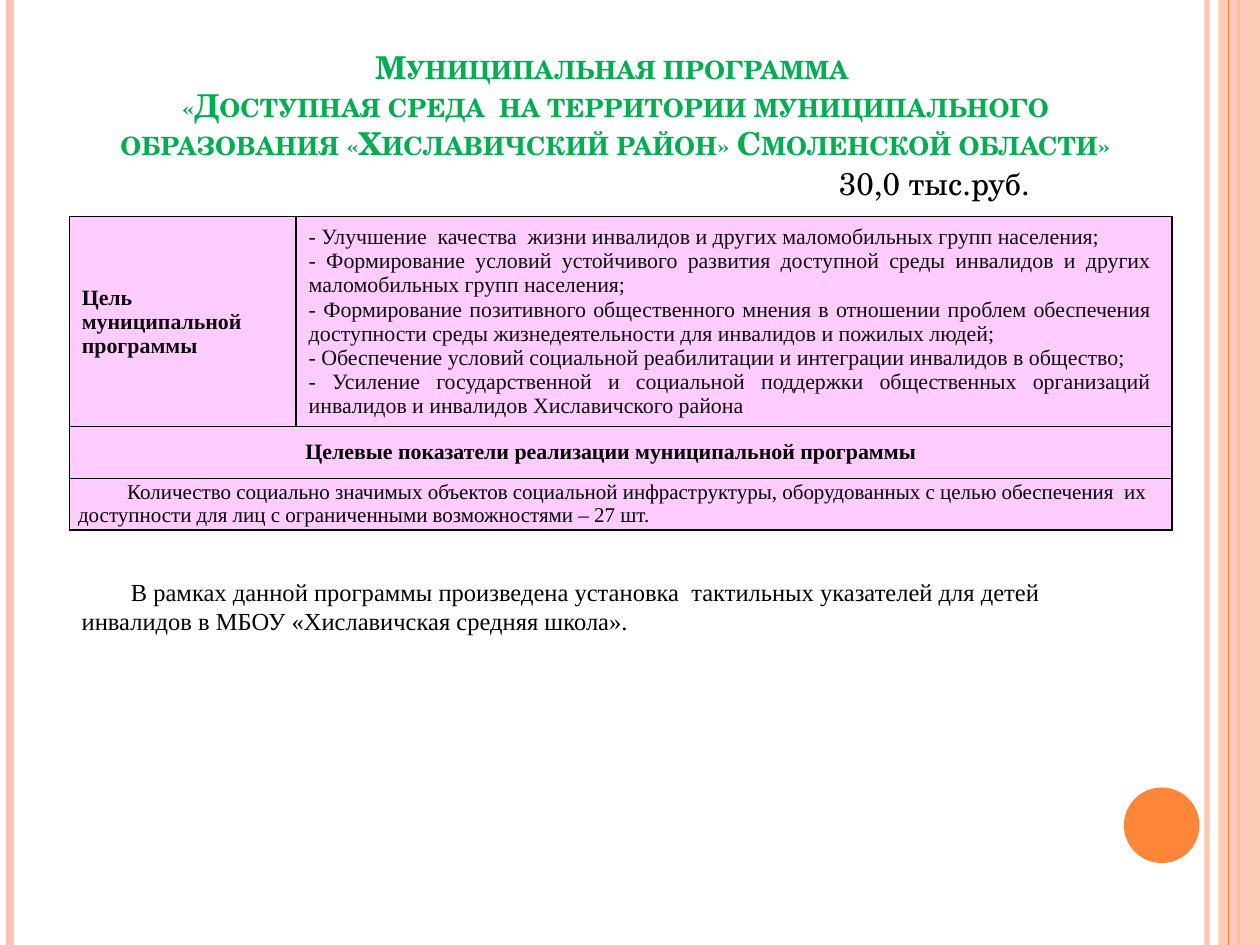
from collections import namedtuple

from lxml.etree import SubElement
from pptx import Presentation
from pptx.dml.color import RGBColor
from pptx.enum.shapes import MSO_CONNECTOR, MSO_SHAPE
from pptx.enum.text import MSO_ANCHOR, PP_ALIGN
from pptx.oxml import parse_xml
from pptx.oxml.ns import nsdecls, qn
from pptx.util import Inches, Pt

COLUMNS, ROWS = 100, 75
UNIT = Inches(0.1)
SERIF, SCHOOL = "Times New Roman", "TeX Gyre Schola"
PEACH, ORANGE, GREEN, PINK = "FEC3AE", "FE8637", "00B050", "FFCCFF"
BLACK, CHARCOAL = "000000", "0D0D0D"

Box = namedtuple("Box", "left top width height")

TITLE = """Муниципальная программа 
«Доступная среда  на территории муниципального образования «Хиславичский район» Смоленской области»"""
GOALS = [
    "- Улучшение  качества  жизни инвалидов и других маломобильных групп населения; ",
    "- Формирование условий устойчивого развития доступной среды инвалидов и других "
    "маломобильных групп населения;",
    "- Формирование позитивного общественного мнения в отношении проблем обеспечения "
    "доступности среды жизнедеятельности для инвалидов и пожилых людей;",
    "- Обеспечение условий социальной реабилитации и интеграции инвалидов в общество;",
    "- Усиление государственной и социальной поддержки общественных организаций "
    "инвалидов и инвалидов Хиславичского района",
]
INDICATOR = ("Количество социально значимых объектов социальной инфраструктуры, оборудованных "
             "с целью обеспечения  их  доступности для лиц с ограниченными возможностями – 27 шт.")
RESULT = ("В рамках данной программы произведена установка  тактильных указателей для детей "
          "инвалидов в МБОУ «Хиславичская средняя школа».")


def grid(count):
    """Turn a number of grid units into a length."""
    return round(count * UNIT)


def color(value):
    """Turn a hex string into a colour."""
    return RGBColor.from_string(value)


def set_alpha(fill_parent, percent):
    """Make the solid colour inside an element partly transparent."""
    for tint in fill_parent.iter(qn("a:srgbClr")):
        SubElement(tint, qn("a:alpha"), val=str(percent * 1000))


def write(frame, paragraphs, size=18, font=SERIF, ink=BLACK, bold=False, small_caps=False,
          align=PP_ALIGN.LEFT, left=0, right=0, first=0):
    """Fill a text frame with evenly formatted paragraphs."""
    frame.word_wrap = True
    for index, text in enumerate(paragraphs):
        para = frame.add_paragraph() if index else frame.paragraphs[0]
        para.text = text
        para.alignment = align
        properties = para._p.get_or_add_pPr()
        for name, count in (("marL", left), ("marR", right), ("indent", first)):
            properties.set(name, str(grid(count)))
        for span in para.runs:
            span.font.size, span.font.name, span.font.bold = Pt(size), font, bold
            span.font.color.rgb = color(ink)
            if small_caps:
                span.font._element.set("cap", "small")


def add_text(page, box, text, anchor=MSO_ANCHOR.TOP, **style):
    """Place a text box on the grid."""
    frame = page.shapes.add_textbox(*map(grid, box)).text_frame
    frame.vertical_anchor = anchor
    write(frame, [text], **style)


def add_rule(page, box, column, width, ink, opacity=100):
    """Draw a vertical line from top to bottom of the box."""
    x = grid(box.left + column)
    rule = page.shapes.add_connector(MSO_CONNECTOR.STRAIGHT, x, grid(box.top),
                                     x, grid(box.top + box.height))
    rule.line.width = Pt(width)
    rule.line.color.rgb = color(ink)
    properties = rule._element.spPr
    SubElement(properties, qn("a:effectLst"))
    if opacity < 100:
        set_alpha(properties, opacity)


def add_figure(page, box, kind, ink, opacity=100):
    """Draw a plain filled shape without outline."""
    figure = page.shapes.add_shape(kind, *map(grid, box))
    figure.shadow.inherit = False
    figure.fill.solid()
    figure.fill.fore_color.rgb = color(ink)
    figure.line.fill.background()
    if opacity < 100:
        set_alpha(figure._element.spPr, opacity)


def add_decoration(page, box):
    """Draw the side stripes and the round badge."""
    add_rule(page, box, 95.8, 3, PEACH, opacity=93)
    add_rule(page, box, 0.8, 4.5, PEACH)
    add_rule(page, box, 98.3, 1.5, ORANGE)
    band = Box(box.left + 96.7, box.top, 3.3, box.height)
    add_figure(page, band, MSO_SHAPE.RECTANGLE, PEACH, opacity=87)
    add_rule(page, box, 97.5, 0.75, ORANGE)
    badge = Box(box.left + 89.2, box.top + 62.5, 6, 6)
    add_figure(page, badge, MSO_SHAPE.OVAL, ORANGE)


def style_cell(cell):
    """Give a cell its fill, margins and borders."""
    cell.fill.solid()
    cell.fill.fore_color.rgb = color(PINK)
    cell.vertical_anchor = MSO_ANCHOR.MIDDLE
    cell.margin_left = cell.margin_right = grid(0.7)
    cell.margin_top = cell.margin_bottom = 0
    properties = cell._tc.get_or_add_tcPr()
    for index, side in enumerate("LRTB"):
        properties.insert(index, parse_xml(
            f'<a:ln{side} {nsdecls("a")} w="{Pt(1)}"><a:solidFill>'
            f'<a:srgbClr val="{BLACK}"/></a:solidFill></a:ln{side}>'))


def add_program_table(page, box):
    """Build the table of goals and indicators."""
    table = page.shapes.add_table(3, 2, *map(grid, box)).table
    table.first_row = table.horz_banding = False
    label_width, short_row = 18, 4.1
    widths = label_width, box.width - label_width
    heights = box.height - 2 * short_row, short_row, short_row
    for column, width in zip(table.columns, widths):
        column.width = grid(width)
    for row, height in zip(table.rows, heights):
        row.height = grid(height)
    for cell in table.iter_cells():
        style_cell(cell)
    for row in (1, 2):
        table.cell(row, 0).merge(table.cell(row, 1))

    body = dict(size=12.5, ink=CHARCOAL, align=PP_ALIGN.JUSTIFY, left=0.3, right=1)
    heading = dict(body, ink=BLACK, bold=True, align=PP_ALIGN.CENTER)
    contents = [
        (0, 0, ["Цель муниципальной программы"], dict(body, bold=True)),
        (0, 1, GOALS, body),
        (1, 0, ["Целевые показатели реализации муниципальной программы  "], heading),
        (2, 0, [INDICATOR], dict(size=12, first=3.9)),
    ]
    for row, column, paragraphs, style in contents:
        write(table.cell(row, column).text_frame, paragraphs, **style)


def build_program_slide(page, box):
    """Lay out the whole programme slide."""
    add_decoration(page, box)
    add_text(page, Box(4.7, 3.1, 88.3, 10.2), TITLE, anchor=MSO_ANCHOR.BOTTOM, font=SCHOOL,
             ink=GREEN, bold=True, small_caps=True, align=PP_ALIGN.CENTER)
    add_program_table(page, Box(5.5, 17.2, 87.5, 23.5))
    add_text(page, Box(5.5, 45.3, 85.9, 5.7), RESULT, size=14, first=3.9)
    add_text(page, Box(65.6, 12.5, 24.2, 4), "30,0 тыс.руб.", font=SCHOOL)


def main():
    """Create the deck and save it."""
    deck = Presentation()
    deck.slide_width, deck.slide_height = grid(COLUMNS), grid(ROWS)
    page = deck.slides.add_slide(deck.slide_layouts[6])
    build_program_slide(page, Box(0, 0, COLUMNS, ROWS))
    deck.save("out.pptx")


if __name__ == "__main__":
    main()
